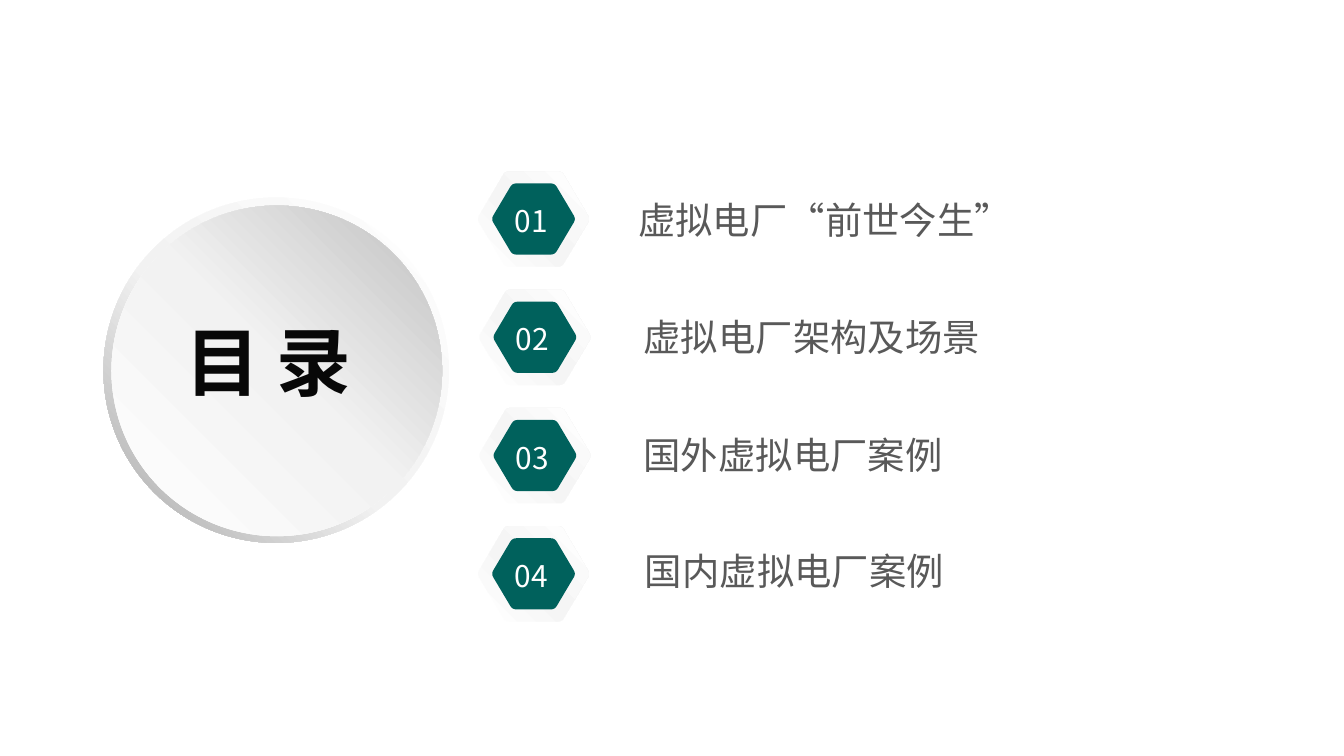
from lxml import etree
from pptx import Presentation
from pptx.dml.color import RGBColor
from pptx.enum.lang import MSO_LANGUAGE_ID
from pptx.enum.shapes import MSO_SHAPE
from pptx.enum.text import MSO_AUTO_SIZE
from pptx.oxml.ns import qn
from pptx.util import Inches, Pt

WHITE = RGBColor(0xFF, 0xFF, 0xFF)
PALE = RGBColor(0xF5, 0xF5, 0xF5)
LIGHT = RGBColor(0xF2, 0xF2, 0xF2)
SILVER = RGBColor(0xBF, 0xBF, 0xBF)
GREY = RGBColor(0xA6, 0xA6, 0xA6)
TEXT_GREY = RGBColor(0x59, 0x59, 0x59)
BLACK = RGBColor(0x08, 0x08, 0x08)
TEAL = RGBColor(0x00, 0x61, 0x5C)
FONT = "Noto Sans CJK SC"

RING_STOPS = [(0, WHITE), (55, LIGHT), (100, GREY)]
DISC_STOPS = [(0, WHITE), (51, LIGHT), (100, SILVER)]
BADGE_STOPS = [(0, WHITE), (47, PALE), (100, WHITE)]

# entry, badge centre x, label left, label top, label width
CONTENTS = [
    ("虚拟电厂“前世今生”", 3.97, 4.65, 1.42, 4.61),
    ("虚拟电厂架构及场景", 3.98, 4.69, 2.29, 5.0),
    ("国外虚拟电厂案例", 3.98, 4.69, 3.17, 4.74),
    ("国内虚拟电厂案例", 3.97, 4.7, 4.03, 5.16),
]
FIRST_ROW, ROW_PITCH = 1.63, 0.88


def rounded_hexagon(cx, cy, width, height, cut):
    """Return outline points with each corner rounded by a quadratic curve."""
    a, b = width / 2, height / 2
    corners = [(a, 0), (a / 2, b), (-a / 2, b), (-a, 0), (-a / 2, -b), (a / 2, -b)]
    points = []
    for i, (x, y) in enumerate(corners):
        ends = []
        for nx, ny in (corners[i - 1], corners[(i + 1) % 6]):
            share = cut / ((nx - x) ** 2 + (ny - y) ** 2) ** 0.5
            ends.append((x + (nx - x) * share, y + (ny - y) * share))
        (x0, y0), (x1, y1) = ends
        for t in (0, 0.25, 0.5, 0.75, 1):
            p, q, r = (1 - t) ** 2, 2 * t * (1 - t), t ** 2
            points.append((Inches(cx + p * x0 + q * x + r * x1),
                           Inches(cy + p * y0 + q * y + r * y1)))
    return points


class ContentsSlide:
    def __init__(self, slide, font):
        self.slide = slide
        self.font = font

    def paint(self, shape, fill, angle):
        """Fill with one colour, or with gradient stops at a clockwise angle."""
        shape.shadow.inherit = False
        shape.line.fill.background()
        if isinstance(fill, RGBColor):
            shape.fill.solid()
            shape.fill.fore_color.rgb = fill
            return
        shape.fill.gradient()
        shape.fill.gradient_angle = 360 - angle
        stops = shape.element.spPr.find(".//" + qn("a:gsLst"))
        for stop in list(stops):
            stops.remove(stop)
        for position, color in fill:
            stop = etree.SubElement(stops, qn("a:gs"), pos=str(position * 1000))
            etree.SubElement(stop, qn("a:srgbClr"), val=str(color))

    def round_shape(self, kind, left, top, size, fill, angle):
        shape = self.slide.shapes.add_shape(
            kind, Inches(left), Inches(top), Inches(size), Inches(size))
        self.paint(shape, fill, angle)
        return shape

    def hexagon(self, cx, cy, width, height, cut, fill, angle=0):
        start, *rest = rounded_hexagon(cx, cy, width, height, cut)
        builder = self.slide.shapes.build_freeform(*start)
        builder.add_line_segments(rest, close=True)
        self.paint(builder.convert_to_shape(), fill, angle)

    def text(self, words, left, top, width, height, size, color, bold=False):
        box = self.slide.shapes.add_textbox(
            Inches(left), Inches(top), Inches(width), Inches(height))
        frame = box.text_frame
        frame.word_wrap = True
        frame.auto_size = MSO_AUTO_SIZE.SHAPE_TO_FIT_TEXT
        run = frame.paragraphs[0].add_run()
        run.text = words
        font = run.font
        font.size, font.bold, font.name = Pt(size), bold, self.font
        font.color.rgb = color
        font.language_id = MSO_LANGUAGE_ID.SIMPLIFIED_CHINESE
        latin = run._r.rPr.find(qn("a:latin"))
        latin.addnext(latin.makeelement(qn("a:ea"), {"typeface": self.font}))

    def badge(self, number, cx, cy):
        self.hexagon(cx, cy, 0.85, 0.71, 0.03, WHITE)
        self.hexagon(cx, cy, 0.84, 0.71, 0.03, BADGE_STOPS, 315)
        self.hexagon(cx, cy, 0.63, 0.53, 0.03, TEAL)
        self.text(number, cx - 0.24, cy - 0.17, 0.59, 0.37, 16, WHITE)


def main():
    deck = Presentation()
    deck.slide_width = Inches(10)
    deck.slide_height = deck.slide_width * 9 // 16
    page = ContentsSlide(deck.slides.add_slide(deck.slide_layouts[6]), FONT)

    ring = page.round_shape(MSO_SHAPE.DONUT, 0.77, 1.47, 2.57, RING_STOPS, 135)
    ring.adjustments[0] = 0.049
    page.round_shape(MSO_SHAPE.OVAL, 0.83, 1.53, 2.46, DISC_STOPS, 315)
    page.text("目 录", 1.28, 2.3, 1.81, 0.77, 40, BLACK, bold=True)

    for row, (entry, cx, left, top, width) in enumerate(CONTENTS):
        page.badge(f"{row + 1:02}", cx, FIRST_ROW + row * ROW_PITCH)
        page.text(entry, left, top, width, 0.44, 20, TEXT_GREY)

    deck.save("out.pptx")


if __name__ == "__main__":
    main()
